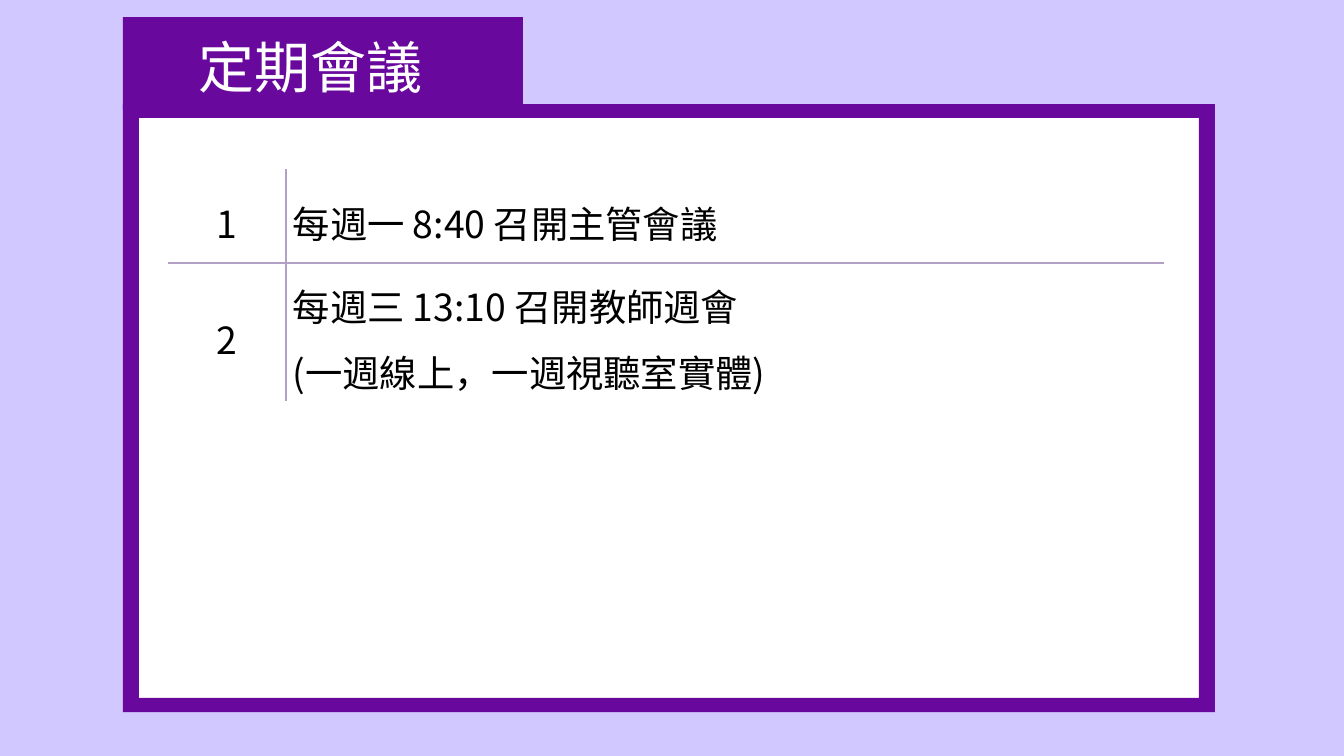
from lxml.etree import SubElement
from pptx import Presentation
from pptx.dml.color import RGBColor
from pptx.enum.shapes import MSO_SHAPE
from pptx.enum.text import MSO_ANCHOR, PP_ALIGN
from pptx.oxml.ns import qn
from pptx.util import Pt

SCALE = 914400 / 67.2
WIDTH, HEIGHT = 1344, 756
FONT = "Noto Sans CJK TC"
COLORS = {
    "background": "D0C8FF",
    "purple": "69089D",
    "panel": "FFFFFF",
    "rule": "B2A0C7",
    "title": "FFFFFF",
    "body": "000000",
}
MEETINGS = [
    ["1", "每週一 8:40 召開主管會議"],
    ["2", "每週三 13:10 召開教師週會\n(一週線上，一週視聽室實體)"],
]


def px(length):
    return round(length * SCALE)


def color(name):
    return RGBColor.from_string(COLORS[name])


class SlideBuilder:
    def __init__(self, slide):
        self.slide = slide
        background = slide.background.fill
        background.solid()
        background.fore_color.rgb = color("background")

    def paint(self, shape, fill):
        shape.shadow.inherit = False
        shape.fill.solid()
        shape.fill.fore_color.rgb = color(fill)
        shape.line.fill.background()

    def rectangle(self, left, top, width, height, fill):
        box = self.slide.shapes.add_shape(
            MSO_SHAPE.RECTANGLE, px(left), px(top), px(width), px(height))
        self.paint(box, fill)

    def frame(self, left, top, width, height, side, edge, fill):
        """Draw a hollow border, side px wide and edge px high."""
        right, bottom = left + width, top + height
        builder = self.slide.shapes.build_freeform(left, top, scale=SCALE)
        builder.add_line_segments([(right, top), (right, bottom), (left, bottom)])
        builder.move_to(left + side, top + edge)
        builder.add_line_segments([
            (left + side, bottom - edge),
            (right - side, bottom - edge),
            (right - side, top + edge),
        ])
        self.paint(builder.convert_to_shape(), fill)

    def style_text(self, text_frame, size, ink, align, spacing=1.0):
        text_frame.word_wrap = True
        for paragraph in text_frame.paragraphs:
            paragraph.alignment = align
            paragraph.line_spacing = spacing
            for run in paragraph.runs:
                run.font.size = Pt(size)
                run.font.name = FONT
                run.font.color.rgb = color(ink)
                SubElement(run.font._element, qn("a:ea"), typeface=FONT)

    def text(self, left, top, width, height, words, size, ink):
        box = self.slide.shapes.add_textbox(px(left), px(top), px(width), px(height))
        box.text_frame.text = words
        box.text_frame.vertical_anchor = MSO_ANCHOR.MIDDLE
        self.style_text(box.text_frame, size, ink, PP_ALIGN.CENTER)

    def cell_borders(self, cell, ruled_sides):
        properties = cell._tc.get_or_add_tcPr()
        for side in "LRTB":
            line = SubElement(properties, qn(f"a:ln{side}"), w=str(Pt(3)))
            if side in ruled_sides:
                fill = SubElement(line, qn("a:solidFill"))
                SubElement(fill, qn("a:srgbClr"), val=COLORS["rule"])
            else:
                SubElement(line, qn("a:noFill"))

    def table(self, left, top, columns, rows, contents, size):
        """Draw a table that is ruled only between its cells."""
        table = self.slide.shapes.add_table(
            len(rows), len(columns), px(left), px(top),
            px(sum(columns)), px(sum(rows))).table
        table.first_row = table.horz_banding = False
        for column, width in zip(table.columns, columns):
            column.width = px(width)
        for row, height in zip(table.rows, rows):
            row.height = px(height)
        for r, entries in enumerate(contents):
            for c, words in enumerate(entries):
                cell = table.cell(r, c)
                cell.text_frame.text = words
                cell.vertical_anchor = MSO_ANCHOR.MIDDLE
                align = PP_ALIGN.LEFT if c else PP_ALIGN.CENTER
                self.style_text(cell.text_frame, size, "body", align, 1.22)
                self.cell_borders(cell, ("L" if c else "R") + ("T" if r else "B"))
                cell.fill.background()


def main():
    presentation = Presentation()
    presentation.slide_width, presentation.slide_height = px(WIDTH), px(HEIGHT)
    builder = SlideBuilder(
        presentation.slides.add_slide(presentation.slide_layouts[6]))

    builder.rectangle(131, 110, 1076, 595, "panel")
    builder.frame(123, 104, 1092, 608, 16, 14, "purple")
    builder.rectangle(123, 17, 400, 93, "purple")
    builder.table(168, 169, [118, 878], [94, 138], MEETINGS, 40)
    builder.text(45, 7, 531, 118, "定期會議", 60, "title")
    presentation.save("out.pptx")


if __name__ == "__main__":
    main()
